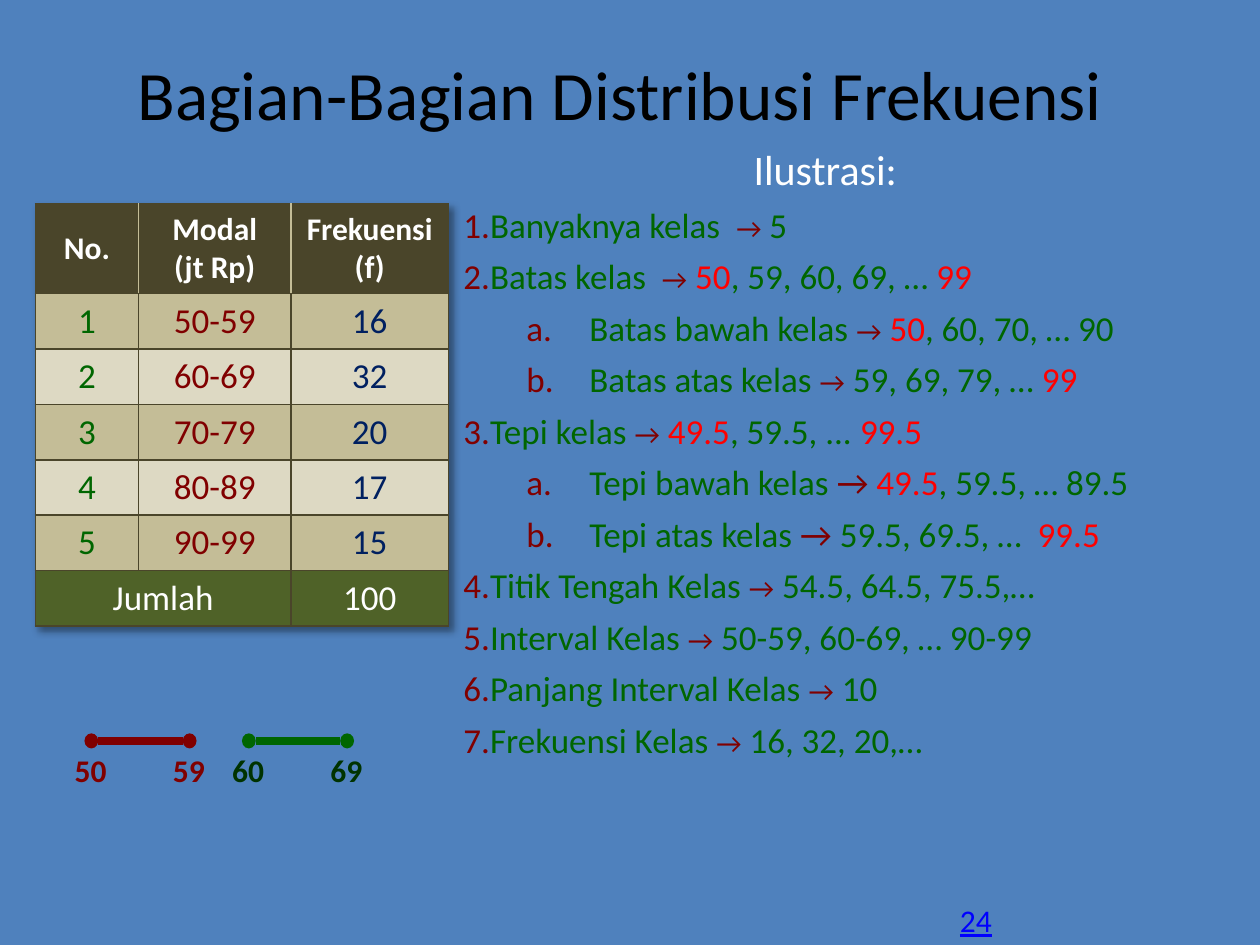
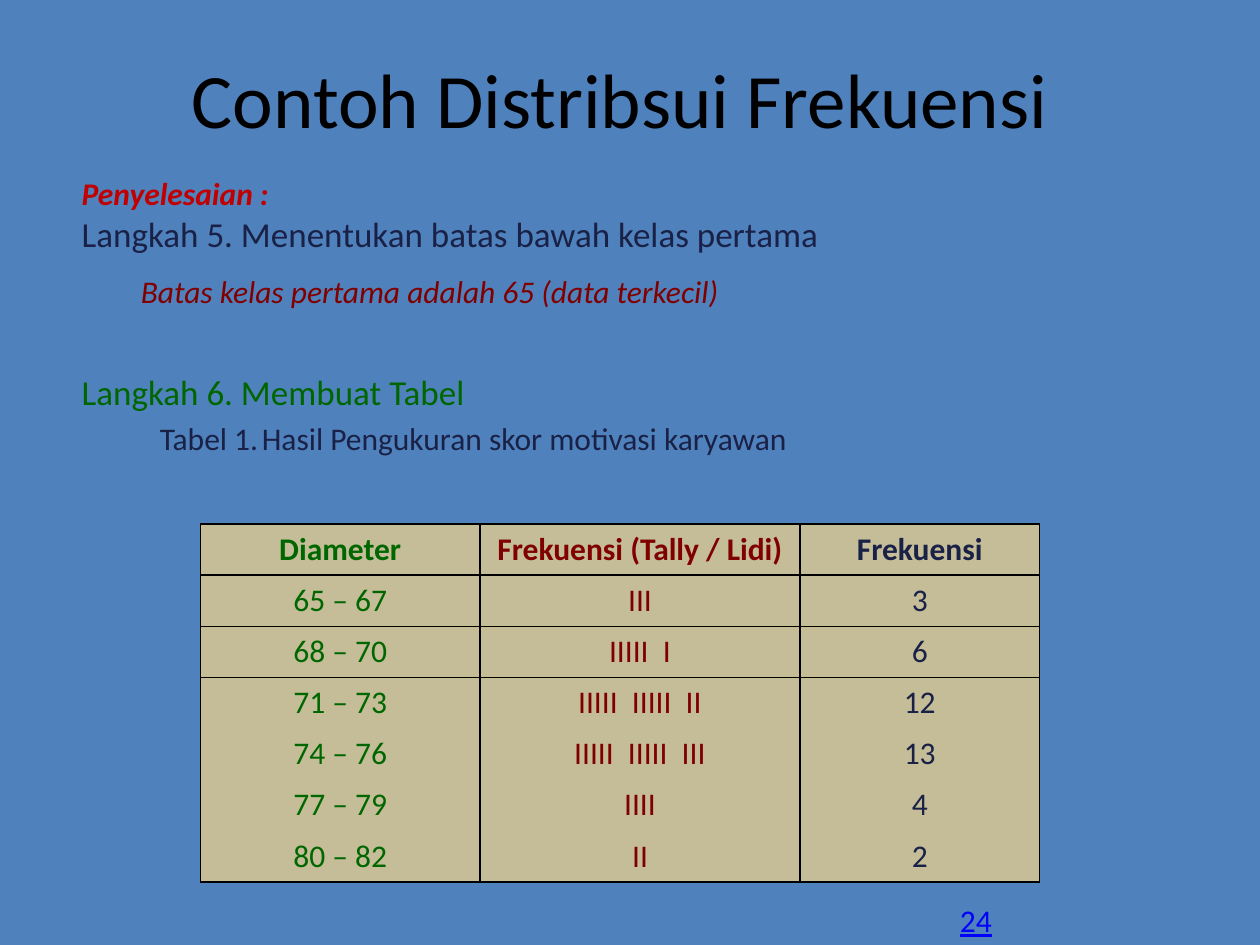
from lxml import etree
from pptx import Presentation
from pptx.dml.color import RGBColor
from pptx.enum.shapes import MSO_CONNECTOR, MSO_SHAPE
from pptx.enum.text import MSO_ANCHOR, PP_ALIGN
from pptx.oxml.ns import qn
from pptx.util import Inches, Pt

CENTER, LEFT = PP_ALIGN.CENTER, PP_ALIGN.LEFT
TOP, MIDDLE = MSO_ANCHOR.TOP, MSO_ANCHOR.MIDDLE
OVAL, STRAIGHT = MSO_SHAPE.OVAL, MSO_CONNECTOR.STRAIGHT

FONT = "Calibri"
BLUE, WHITE, BLACK = "4F81BD", "FFFFFF", "000000"
GREEN, MAROON, RED, NAVY = "006600", "800000", "FF0000", "1A2146"
BROWN, TAN, CREAM, OLIVE = "4A452A", "C4BD97", "DDD9C3", "4F6228"
NO_TABLE_STYLE = "{2D5ABB26-0587-4C30-8999-92F81FD0307C}"
PAGE_LABEL = "24"

# Level, label, arrow size, values (limits between asterisks are red)
PARTS = [
    (0, "Banyaknya kelas  ", 16, " 5"),
    (0, "Batas kelas  ", 16, " *50*, 59, 60, 69, … *99"),
    (1, "Batas bawah kelas ", 16, " *50*, 60, 70, … 90"),
    (1, "Batas atas kelas ", 16, " 59, 69, 79, … *99"),
    (0, "Tepi kelas ", 16, " *49.5*, 59.5, ... *99.5"),
    (1, "Tepi bawah kelas ", 20, " *49.5*, 59.5, … 89.5"),
    (1, "Tepi atas kelas ", 20, " 59.5, 69.5, …  *99.5"),
    (0, "Titik Tengah Kelas ", 16, " 54.5, 64.5, 75.5,…"),
    (0, "Interval Kelas ", 16, " 50-59, 60-69, … 90-99"),
    (0, "Panjang Interval Kelas ", 16, " 10"),
    (0, "Frekuensi Kelas ", 16, " 16, 32, 20,…"),
]
CAPITAL_ROWS = [
    ("No.", "Modal\n(jt Rp)", "Frekuensi\n(f)"),
    ("1", "50-59", "16"),
    ("2", "60-69", "32"),
    ("3", "70-79", "20"),
    ("4", "80-89", "17"),
    ("5", "90-99", "15"),
    ("Jumlah", "", "100"),
]
# Left edge, line colour, label colour, class limits
INTERVALS = [
    (0.67, MAROON, MAROON, ("50", "59")),
    (1.92, GREEN, "003300", ("60", "69")),
]
# Text, left, top, width, size, colour, bold, italic, hanging indent
STEPS = [
    ("Penyelesaian :", 0.55, 1.33, 1.71, 18, "C00000", True, True, 0),
    ("Langkah 5. Menentukan batas bawah kelas pertama",
     0.55, 1.64, 9, 20, NAVY, False, False, 0),
    ("Batas kelas pertama adalah 65 (data terkecil)",
     1.02, 2.11, 5, 18, MAROON, False, True, 0),
    ("Langkah 6. Membuat Tabel", 0.55, 2.89, 9, 20, GREEN, False, False, 0),
    ("Tabel 1.\tHasil Pengukuran skor motivasi karyawan",
     1.17, 3.28, 6.64, 18, NAVY, False, False, 0.81),
]
TALLY_ROWS = [
    ("Diameter", "Frekuensi (Tally / Lidi)", "Frekuensi"),
    ("65 – 67", "III", "3"),
    ("68 – 70", "IIIII  I", "6"),
    ("71 – 73", "IIIII  IIIII  II", "12"),
    ("74 – 76", "IIIII  IIIII  III", "13"),
    ("77 – 79", "IIII", "4"),
    ("80 – 82", "II", "2"),
]


def rgb(color):
    return RGBColor.from_string(color)


def box(*lengths):
    return [Inches(n) for n in lengths]


def style(font, size, color, bold=False, italic=False):
    font.name, font.size = FONT, Pt(size)
    font.bold, font.italic = bold, italic
    font.color.rgb = rgb(color)


def sub(parent, tag, **attrs):
    return etree.SubElement(parent, qn(tag), attrs)


def add_text(s, text, at, size, color, bold=False, italic=False,
             align=LEFT, wrap=True):
    tf = s.shapes.add_textbox(*box(*at)).text_frame
    tf.word_wrap = wrap
    p = tf.paragraphs[0]
    p.text, p.alignment = text, align
    style(p.font, size, color, bold, italic)
    return p


def new_slide(prs, title, size):
    s = prs.slides.add_slide(prs.slide_layouts[5])
    sp = s.shapes.title
    sp.left, sp.top, sp.width, sp.height = box(0.67, 0.33, 8.5, 1.25)
    tf = sp.text_frame
    tf.text, tf.vertical_anchor, tf.margin_top = title, TOP, Inches(0.08)
    tf.paragraphs[0].alignment = CENTER
    style(tf.paragraphs[0].font, size, BLACK)
    p = add_text(s, PAGE_LABEL, (7.52, 7.1, 0.46, 0.4), 18, "0000FF", wrap=False)
    p.font.underline = True
    return s


def add_plain_table(s, rows, at, widths):
    table = s.shapes.add_table(len(rows), len(widths), *box(*at)).table
    table.first_row = table.horz_banding = False
    table._tbl.tblPr.find(qn("a:tableStyleId")).text = NO_TABLE_STYLE
    for column, width in zip(table.columns, widths):
        column.width = Inches(width)
    return table


def fill_cell(cell, text, fill, borders, size, color, bold, anchor=TOP):
    """Format one cell; borders maps the sides L, R, T, B to colours."""
    tcPr = cell._tc.get_or_add_tcPr()
    for side in "LRTB":
        if side in borders:
            ln = sub(tcPr, f"a:ln{side}", w=str(Pt(1)))
            sub(sub(ln, "a:solidFill"), "a:srgbClr", val=borders[side])
    cell.fill.solid()
    cell.fill.fore_color.rgb = rgb(fill)
    cell.vertical_anchor = anchor
    cell.text_frame.text = text
    for p in cell.text_frame.paragraphs:
        p.alignment = CENTER
        style(p.font, size, color, bold)


def add_table_shadow(table):
    effects = etree.Element(qn("a:effectLst"))
    shadow = sub(effects, "a:outerShdw", blurRad=str(Pt(4)), dist=str(Pt(3)),
                 dir="2700000", algn="tl", rotWithShape="0")
    sub(sub(shadow, "a:srgbClr", val=BLACK), "a:alpha", val="40000")
    table._tbl.tblPr.insert(0, effects)


def add_capital_table(s):
    table = add_plain_table(s, CAPITAL_ROWS, (0.28, 1.62, 3.28, 3.08),
                            (0.82, 1.21, 1.25))
    table.rows[0].height = Inches(0.71)
    last = len(CAPITAL_ROWS) - 1
    for i, row in enumerate(CAPITAL_ROWS):
        for j, text in enumerate(row):
            borders = dict.fromkeys("LRTB", BROWN)
            fill, color = (TAN if i % 2 else CREAM), (GREEN, MAROON, "002060")[j]
            if i == 0:
                fill, color = BROWN, WHITE
                if j > 0:
                    borders["L"] = TAN
                if j < 2:
                    borders["R"] = TAN
            elif i == last:
                fill, color = OLIVE, WHITE
            fill_cell(table.cell(i, j), text, fill, borders,
                      20 if i else 18, color, i == 0, MIDDLE)
    table.cell(last, 0).merge(table.cell(last, 1))
    add_table_shadow(table)


def add_tally_table(s):
    table = add_plain_table(s, TALLY_ROWS, (1.59, 4.16, 6.67, 2.84),
                            (2.22, 2.54, 1.9))
    last = len(TALLY_ROWS) - 1
    for i, row in enumerate(TALLY_ROWS):
        sides = "LR" + ("T" if i < 3 else "") + ("B" if i in (0, 1, last) else "")
        for j, text in enumerate(row):
            fill_cell(table.cell(i, j), text, TAN, dict.fromkeys(sides, BLACK),
                      18, (GREEN, MAROON, NAVY)[j], i == 0)


def add_run(p, text, size, color):
    r = p.add_run()
    r.text = text
    style(r.font, size, color)


def add_parts_list(s):
    heading = add_text(s, "Ilustrasi:", (3.58, 1.09, 5.94, 5.31), 24, WHITE,
                       align=CENTER)
    tf = heading._parent
    for level, label, arrow_size, values in PARTS:
        p = tf.add_paragraph()
        p.level, p.space_before = level, Pt(5.4)
        pPr = p._p.get_or_add_pPr()
        pPr.set("marL", str(Inches(level)))
        pPr.set("indent", str(Inches(-0.5 * level)))
        sub(sub(pPr, "a:buClr"), "a:srgbClr", val=MAROON)
        sub(pPr, "a:buFont", typeface="+mj-lt")
        sub(pPr, "a:buAutoNum", type=("arabicPeriod", "alphaLcPeriod")[level])
        add_run(p, label, 20, GREEN)
        add_run(p, "→", arrow_size, MAROON)
        for i, text in enumerate(values.split("*")):
            if text:
                add_run(p, text, 20, RED if i % 2 else GREEN)


def add_interval(s, left, color, label_color, limits):
    width, height, span, top = 0.11, 0.12, 0.78, 5.82
    middle = top + height / 2
    line = s.shapes.add_connector(
        STRAIGHT, *box(left + width, middle, left + span, middle))
    line.line.color.rgb, line.line.width = rgb(color), Pt(5)
    sub(line._element.spPr, "a:effectLst")
    for i, limit in enumerate(limits):
        x = left + i * span
        dot = s.shapes.add_shape(OVAL, *box(x, top, width, height))
        dot.shadow.inherit = False
        dot.fill.solid()
        dot.fill.fore_color.rgb = rgb(color)
        dot.line.fill.background()
        add_text(s, limit, (x - 0.18, 5.91, 0.46, 0.4), 18, label_color,
                 bold=True, align=CENTER, wrap=False)


def main():
    prs = Presentation()
    prs.slide_width, prs.slide_height = box(10, 7.5)
    background = prs.slide_master.background.fill
    background.solid()
    background.fore_color.rgb = rgb(BLUE)

    s = new_slide(prs, "Bagian-Bagian Distribusi Frekuensi", 39.6)
    add_parts_list(s)
    add_capital_table(s)
    for interval in INTERVALS:
        add_interval(s, *interval)

    s = new_slide(prs, "Contoh Distribsui Frekuensi", 44)
    for text, left, top, width, size, color, bold, italic, hanging in STEPS:
        p = add_text(s, text, (left, top, width, 0.4), size, color, bold, italic)
        if hanging:
            pPr = p._p.get_or_add_pPr()
            pPr.set("marL", str(Inches(hanging)))
            pPr.set("indent", str(Inches(-hanging)))
    add_tally_table(s)

    prs.save("out.pptx")


if __name__ == "__main__":
    main()
